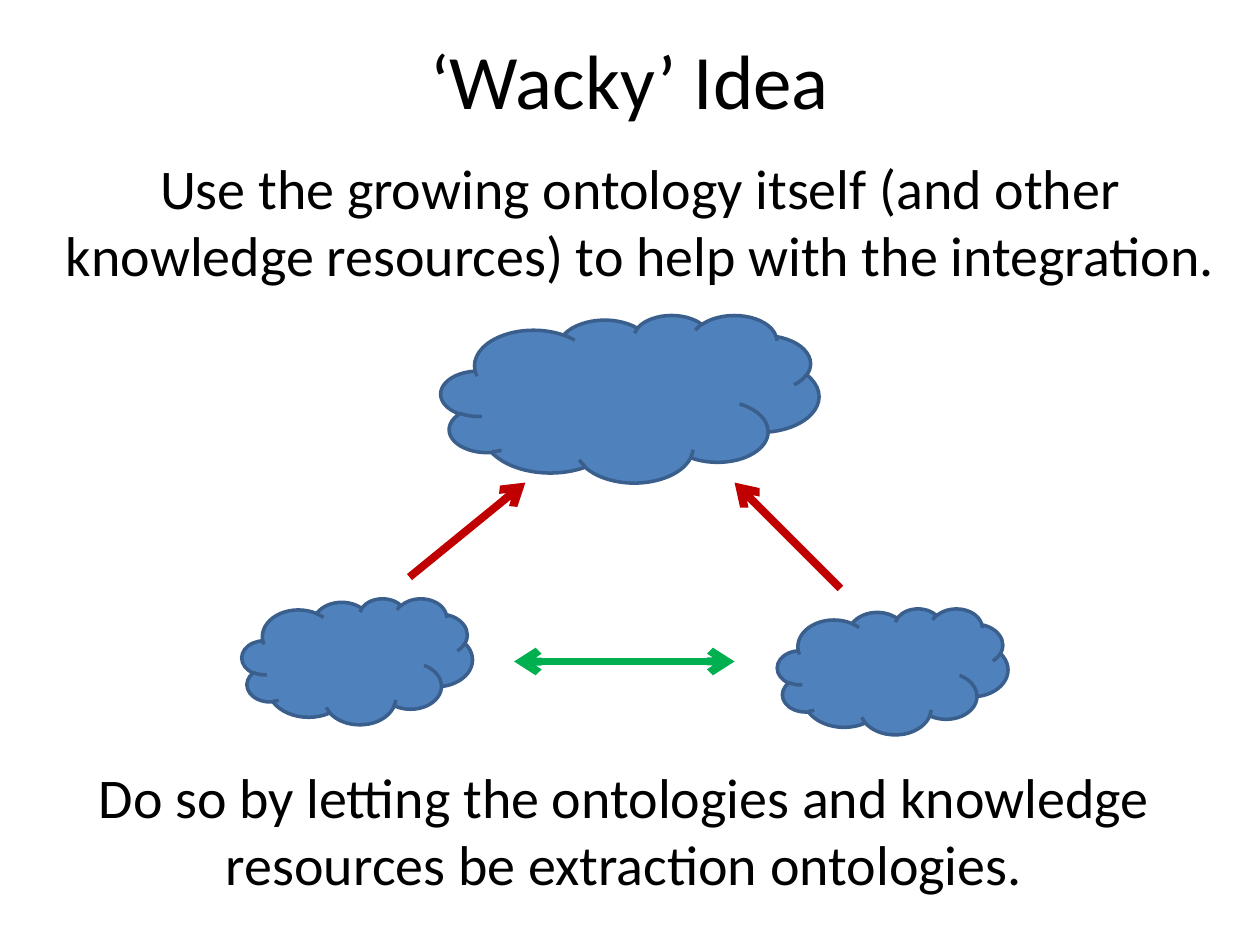
from lxml.etree import SubElement
from pptx import Presentation
from pptx.dml.color import RGBColor
from pptx.enum.shapes import MSO_CONNECTOR, MSO_SHAPE
from pptx.enum.text import MSO_ANCHOR, PP_ALIGN
from pptx.oxml.ns import qn
from pptx.util import Inches, Pt

COLORS = {"text": "000000", "cloud": "4F81BD", "outline": "3A5F8C",
          "feeds": "C00000", "exchange": "00B050"}
FONT = "Calibri"

TITLE = ("‘Wacky’ Idea", (0.5, 0, 9, 1.25))
STATEMENTS = [
    ("Use the growing ontology itself (and other knowledge resources) "
     "to help with the integration.", (0.42, 1.17, 9.33, 1.18)),
    ("Do so by letting the ontologies and knowledge resources "
     "be extraction ontologies.", (0.33, 6, 9.25, 1.18)),
]
CLOUDS = [(3.5, 2.5, 3, 1.33), (1.92, 4.75, 1.83, 1), (6.17, 4.83, 1.83, 1)]
# start, end, colour, ends that carry an arrowhead
ARROWS = [
    ((3.25, 4.58), (4.17, 3.83), "feeds", ["tailEnd"]),
    ((6.67, 4.67), (5.83, 3.83), "feeds", ["tailEnd"]),
    ((4.08, 5.25), (5.83, 5.25), "exchange", ["headEnd", "tailEnd"]),
]


def inches(values):
    return [Inches(value) for value in values]


def color(name):
    return RGBColor.from_string(COLORS[name])


def write(frame, wording, size, anchor):
    frame.text = wording
    frame.word_wrap = True
    frame.vertical_anchor = anchor
    paragraph = frame.paragraphs[0]
    paragraph.alignment = PP_ALIGN.CENTER
    font = paragraph.runs[0].font
    font.name, font.size = FONT, Pt(size)
    font.color.rgb = color("text")


def add_cloud(slide, box):
    cloud = slide.shapes.add_shape(MSO_SHAPE.CLOUD, *inches(box))
    cloud.shadow.inherit = False
    cloud.fill.solid()
    cloud.fill.fore_color.rgb = color("cloud")
    cloud.line.color.rgb = color("outline")
    cloud.line.width = Pt(2)


def add_arrow(slide, start, end, color_name, heads):
    arrow = slide.shapes.add_connector(MSO_CONNECTOR.STRAIGHT, *inches(start + end))
    arrow.line.color.rgb = color(color_name)
    arrow.line.width = Pt(4.5)
    for head in heads:
        SubElement(arrow.line._get_or_add_ln(), qn(f"a:{head}"), type="arrow")
    SubElement(arrow._element.spPr, qn("a:effectLst"))


def main():
    deck = Presentation()
    deck.slide_width, deck.slide_height = inches((10, 7.5))
    slide = deck.slides.add_slide(deck.slide_layouts[5])

    wording, box = TITLE
    title = slide.shapes.title
    title.left, title.top, title.width, title.height = inches(box)
    write(title.text_frame, wording, 44, MSO_ANCHOR.MIDDLE)

    for wording, box in STATEMENTS:
        statement = slide.shapes.add_textbox(*inches(box))
        write(statement.text_frame, wording, 32, MSO_ANCHOR.TOP)
    for box in CLOUDS:
        add_cloud(slide, box)
    for arrow in ARROWS:
        add_arrow(slide, *arrow)

    deck.save("out.pptx")


if __name__ == "__main__":
    main()
